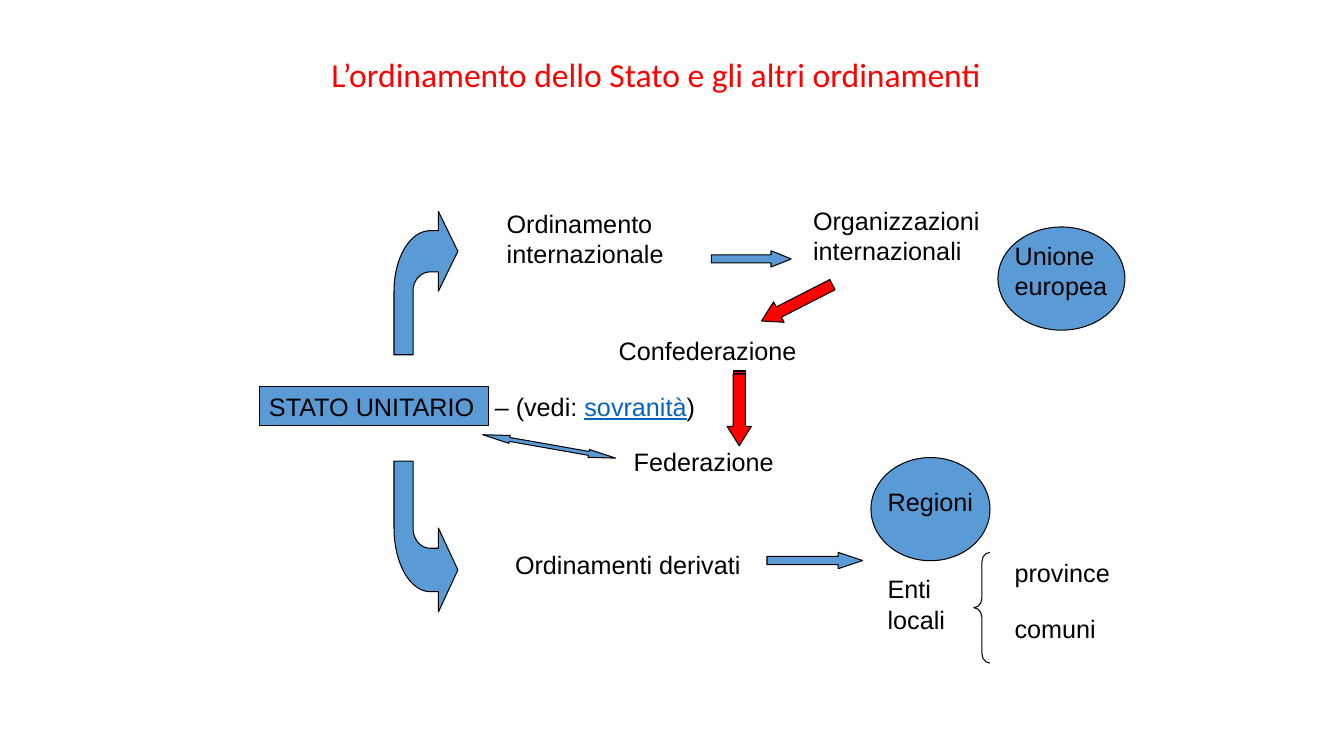
from math import cos, pi, sin

from lxml import etree
from pptx import Presentation
from pptx.dml.color import RGBColor
from pptx.enum.shapes import MSO_SHAPE
from pptx.enum.text import MSO_ANCHOR, PP_ALIGN
from pptx.oxml.ns import qn
from pptx.util import Cm, Pt

RECT, OVAL, BRACE = MSO_SHAPE.RECTANGLE, MSO_SHAPE.OVAL, MSO_SHAPE.LEFT_BRACE
RIGHT, LEFT = MSO_SHAPE.RIGHT_ARROW, MSO_SHAPE.LEFT_ARROW
BOTH, STRIPED = MSO_SHAPE.LEFT_RIGHT_ARROW, MSO_SHAPE.STRIPED_RIGHT_ARROW
TOP, BOTTOM, CENTER = MSO_ANCHOR.TOP, MSO_ANCHOR.BOTTOM, PP_ALIGN.CENTER

THEME = {
    "blue": RGBColor(0x5B, 0x9B, 0xD5),
    "red": RGBColor(0xFF, 0x00, 0x00),
    "black": RGBColor(0x00, 0x00, 0x00),
    "link": RGBColor(0x05, 0x63, 0xC1),
    "title": {"name": "Calibri", "size": Pt(24)},
    "body": {"name": "Arial", "size": Pt(18)},
    "line": Pt(0.75),
}

prs = Presentation()
prs.slide_width, prs.slide_height = Cm(33.87), Cm(19.05)
s = prs.slides.add_slide(prs.slide_layouts[6])


def paint(sp, fill):
    sp.shadow.inherit = False
    if fill:
        sp.fill.solid()
        sp.fill.fore_color.rgb = THEME[fill]
    else:
        sp.fill.background()
    sp.line.color.rgb = THEME["black"]
    sp.line.width = THEME["line"]


def add_text(box, runs, style="body", anchor=TOP):
    tf = s.shapes.add_textbox(*map(Cm, box)).text_frame
    tf.word_wrap = True
    tf.vertical_anchor = anchor
    p = tf.paragraphs[0]
    for text, color, underline in runs:
        r = p.add_run()
        r.text = text
        for name, value in {**THEME[style], "underline": underline}.items():
            setattr(r.font, name, value)
        r.font.color.rgb = THEME[color]
    return p


# Preset shapes: kind, box in cm, fill, rotation, adjustments
SHAPES = [
    (RECT, (6.53, 9.73, 5.79, 0.99), "blue", 0, ()),
    (OVAL, (21.95, 11.53, 3, 2.6), "blue", 0, ()),
    (OVAL, (25.15, 5.72, 3.2, 2.6), "blue", 0, ()),
    (RIGHT, (17.93, 6.32, 2.01, 0.41), "blue", 0, (0.5, 1.24)),
    (RIGHT, (19.33, 13.92, 2.41, 0.41), "blue", 0, (0.5, 1.5)),
    (BRACE, (24.54, 13.92, 0.41, 2.79), None, 0, (0.59, 0.5)),
    (LEFT, (19.08, 7.34, 2.01, 0.58), "red", 332.9, (0.5, 0.85)),
    (STRIPED, (17.68, 9.98, 1.9, 0.61), "red", 90, (0.5, 0.8)),
    (BOTH, (12.14, 11.15, 3.4, 0.2), "blue", 10, (0.5, 3.43)),
]
for kind, box, fill, rotation, adjustments in SHAPES:
    sp = s.shapes.add_shape(kind, *map(Cm, box))
    paint(sp, fill)
    sp.rotation = rotation
    for i, value in enumerate(adjustments):
        sp.adjustments[i] = value

# Bent arrows, mirrored: x in cm, y as a share of the height from the head's edge
STEPS = 16
ANGLES = [pi / 2 * i / STEPS for i in range(STEPS + 1)]
OUTER = [(0.91 * (1 - sin(a)), 0.556 - 0.422 * cos(a)) for a in ANGLES]
INNER = [(0.91 - 0.43 * sin(a), 0.556 - 0.134 * cos(a)) for a in reversed(ANGLES)]
BENT = [(1.61, 0.278), (1.12, 0), (1.12, 0.134), *OUTER, (0, 1),
        (0.48, 1), *INNER, (1.12, 0.422), (1.12, 0.556)]
for head_y, height in ((5.33, 3.61), (15.42, -3.8)):
    points = [(Cm(9.93 + x), Cm(head_y + y * height)) for x, y in BENT]
    builder = s.shapes.build_freeform(*points[0])
    builder.add_line_segments(points[1:], close=True)
    paint(builder.convert_to_shape(), "blue")

# Title
p = add_text((5.74, 0.91, 21.59, 1.6),
             [("L’ordinamento dello Stato e gli altri ordinamenti", "red", False)],
             "title", BOTTOM)
p.alignment, p.line_spacing = CENTER, 0.9

# Unitary state, with a tab stop after the blue box
p = add_text((6.53, 9.73, 14.4, 1.02),
             [("STATO UNITARIO\t– (vedi: ", "black", False),
              ("sovranità", "link", True), (")", "black", False)])
tabs = etree.SubElement(p._p.get_or_add_pPr(), qn("a:tabLst"))
etree.SubElement(tabs, qn("a:tab"), pos=str(Cm(5.69)), algn="l")

# Labels: text, left, top, width, height in cm
LABELS = [
    ("Ordinamento internazionale", 12.52, 5.13, 5.21, 1.78),
    ("Organizzazioni internazionali", 20.24, 5.05, 8.6, 1.78),
    ("Unione europea", 25.32, 5.92, 3.4, 1.78),
    ("Ordinamenti derivati", 12.73, 13.72, 6.81, 1.02),
    ("Regioni", 22.12, 12.12, 4.19, 1.02),
    ("Enti locali", 22.12, 14.33, 2.79, 1.78),
    ("province", 25.32, 13.92, 3.4, 1.02),
    ("comuni", 25.32, 15.32, 3, 1.02),
    ("Confederazione", 15.34, 8.33, 5.41, 1.02),
    ("Federazione", 15.72, 11.13, 4.39, 1.02),
]
for text, *box in LABELS:
    add_text(box, [(text, "black", False)])

prs.save("out.pptx")
